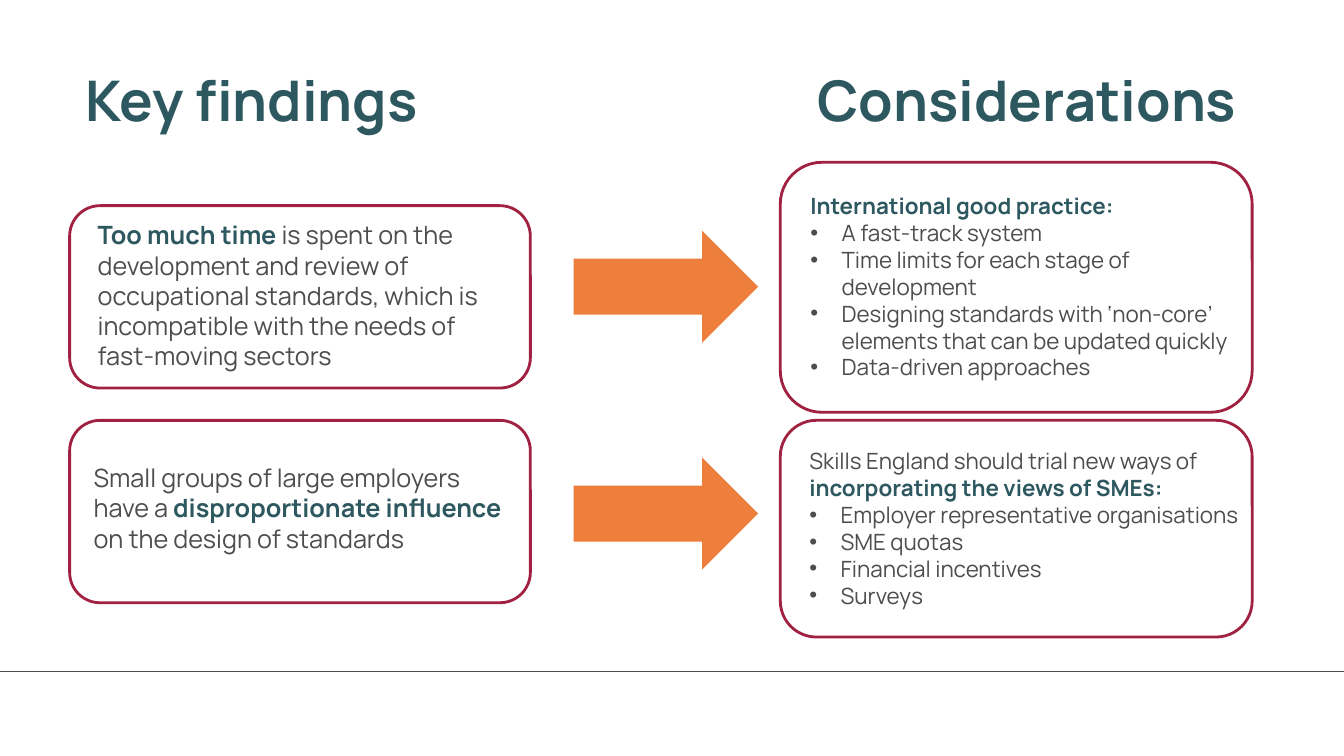
from dataclasses import dataclass

from lxml.etree import SubElement
from pptx import Presentation
from pptx.dml.color import RGBColor
from pptx.enum.shapes import MSO_CONNECTOR as Connector, MSO_SHAPE as Shape
from pptx.enum.text import MSO_ANCHOR as Anchor, MSO_AUTO_SIZE as AutoSize, PP_ALIGN as Align
from pptx.oxml.ns import qn
from pptx.util import Inches, Pt


@dataclass(frozen=True)
class Theme:
    font: str = "Manrope"
    teal: RGBColor = RGBColor(0x2E, 0x58, 0x60)
    grey: RGBColor = RGBColor(0x4D, 0x4D, 0x4D)
    crimson: RGBColor = RGBColor(0xA0, 0x21, 0x40)
    orange: RGBColor = RGBColor(0xEE, 0x7E, 0x3B)
    heading: int = 40
    finding: int = 18
    consideration: int = 16


THEME = Theme()
WIDTH, HEIGHT = Inches(13.33), Inches(7.5)
BULLET_INDENT = Inches(0.31)

# Columns (left, width) in percent of the slide width
FINDING_COLUMN = (5.18, 34.28)
ARROW_COLUMN = (42.68, 13.73)
CONSIDERATION_COLUMN = (58.06, 35.11)

# Rows and heading band (top, height) in percent of the slide height
HEADING_BAND = (5.73, 14.8)
ARROW_HEIGHT = 14.8
FINDING_HEIGHT = 24.13
FOOTER_TOP = 88.8

# Each paragraph is (is_bullet, [(text, is_emphasised), ...])
ROWS = [
    {
        "finding_top": 27.2,
        "arrow_top": 30.53,
        "consideration_band": (21.47, 33.07),
        "finding_text_area": (6.53, 28.4, 32.18, 21.6),
        "consideration_text_area": (59.56, 24.8, 33.46, 26.53),
        "finding": [(False, [
            ("Too much time ", True),
            ("is spent on the development and review of occupational standards, "
             "which is incompatible with the needs of fast-moving sectors", False),
        ])],
        "lead": [("International good practice:", True)],
        "bullets": [
            "A fast-track system",
            "Time limits for each stage of development",
            "Designing standards with ‘non-core’ elements that can be updated quickly",
            "Data-driven approaches",
        ],
    },
    {
        "finding_top": 55.6,
        "arrow_top": 60.53,
        "consideration_band": (55.6, 28.67),
        "finding_text_area": (6.23, 60.53, 32.18, 13.47),
        "consideration_text_area": (59.49, 58.53, 34.28, 22.93),
        "finding": [(False, [
            ("Small groups of large employers have a ", False),
            ("disproportionate influence ", True),
            ("on the design of standards", False),
        ])],
        "lead": [
            ("Skills England should trial new ways of ", False),
            ("incorporating the views of SMEs:", True),
        ],
        "bullets": [
            "Employer representative organisations",
            "SME quotas",
            "Financial incentives",
            "Surveys",
        ],
    },
]


def area(left, top, width, height):
    """Turn percentages of the slide into lengths."""
    return (int(WIDTH * left / 100), int(HEIGHT * top / 100),
            int(WIDTH * width / 100), int(HEIGHT * height / 100))


def add_bullet(paragraph):
    properties = paragraph._p.get_or_add_pPr()
    properties.set("marL", str(BULLET_INDENT))
    properties.set("indent", str(-BULLET_INDENT))
    SubElement(properties, qn("a:buFont")).set("typeface", "Arial")
    SubElement(properties, qn("a:buChar")).set("char", "•")


def write(frame, paragraphs, *, size, anchor=Anchor.TOP):
    frame.word_wrap = True
    frame.auto_size = AutoSize.NONE
    frame.vertical_anchor = anchor
    for index, (is_bullet, pieces) in enumerate(paragraphs):
        paragraph = frame.paragraphs[0] if index == 0 else frame.add_paragraph()
        paragraph.alignment = Align.LEFT
        if is_bullet:
            add_bullet(paragraph)
        for text, emphasised in pieces:
            run = paragraph.add_run()
            run.text = text
            run.font.name = THEME.font
            run.font.size = Pt(size)
            run.font.bold = emphasised
            run.font.color.rgb = THEME.teal if emphasised else THEME.grey


def add_text(slide, place, paragraphs, **text_format):
    write(slide.shapes.add_textbox(*area(*place)).text_frame, paragraphs, **text_format)


def add_card(slide, column, band):
    (left, width), (top, height) = column, band
    card = slide.shapes.add_shape(Shape.ROUNDED_RECTANGLE, *area(left, top, width, height))
    card.shadow.inherit = False
    card.fill.background()
    card.line.color.rgb = THEME.crimson
    card.line.width = Pt(2)


def add_arrow(slide, top):
    left, width = ARROW_COLUMN
    arrow = slide.shapes.add_shape(Shape.RIGHT_ARROW, *area(left, top, width, ARROW_HEIGHT))
    arrow.shadow.inherit = False
    arrow.fill.solid()
    arrow.fill.fore_color.rgb = THEME.orange
    arrow.line.fill.background()


def add_footer_rule(slide):
    left, top, width, _ = area(0, FOOTER_TOP, 100, 0)
    rule = slide.shapes.add_connector(Connector.STRAIGHT, left, top, width, top)
    rule.line.color.rgb = THEME.grey
    rule.line.width = Pt(0.75)
    SubElement(rule._element.spPr, qn("a:effectLst"))


def add_headings(slide):
    top, height = HEADING_BAND
    heading_format = {"size": THEME.heading, "anchor": Anchor.MIDDLE}
    title = slide.shapes.title
    title.left, title.top, title.width, title.height = area(5.63, top, 28.06, height)
    write(title.text_frame, [(False, [("Key findings", True)])], **heading_format)
    add_text(slide, (60.09, top, 34.28, height),
             [(False, [("Considerations", True)])], **heading_format)


def add_row(slide, row):
    # Finding
    add_card(slide, FINDING_COLUMN, (row["finding_top"], FINDING_HEIGHT))
    add_text(slide, row["finding_text_area"], row["finding"], size=THEME.finding)
    # Arrow to the consideration
    add_arrow(slide, row["arrow_top"])
    # Consideration
    add_card(slide, CONSIDERATION_COLUMN, row["consideration_band"])
    consideration = [(False, row["lead"])]
    consideration += [(True, [(bullet, False)]) for bullet in row["bullets"]]
    add_text(slide, row["consideration_text_area"], consideration, size=THEME.consideration)


def main():
    deck = Presentation()
    deck.slide_width, deck.slide_height = WIDTH, HEIGHT
    slide = deck.slides.add_slide(deck.slide_layouts[5])
    add_footer_rule(slide)
    add_headings(slide)
    for row in ROWS:
        add_row(slide, row)
    deck.save("out.pptx")


if __name__ == "__main__":
    main()
